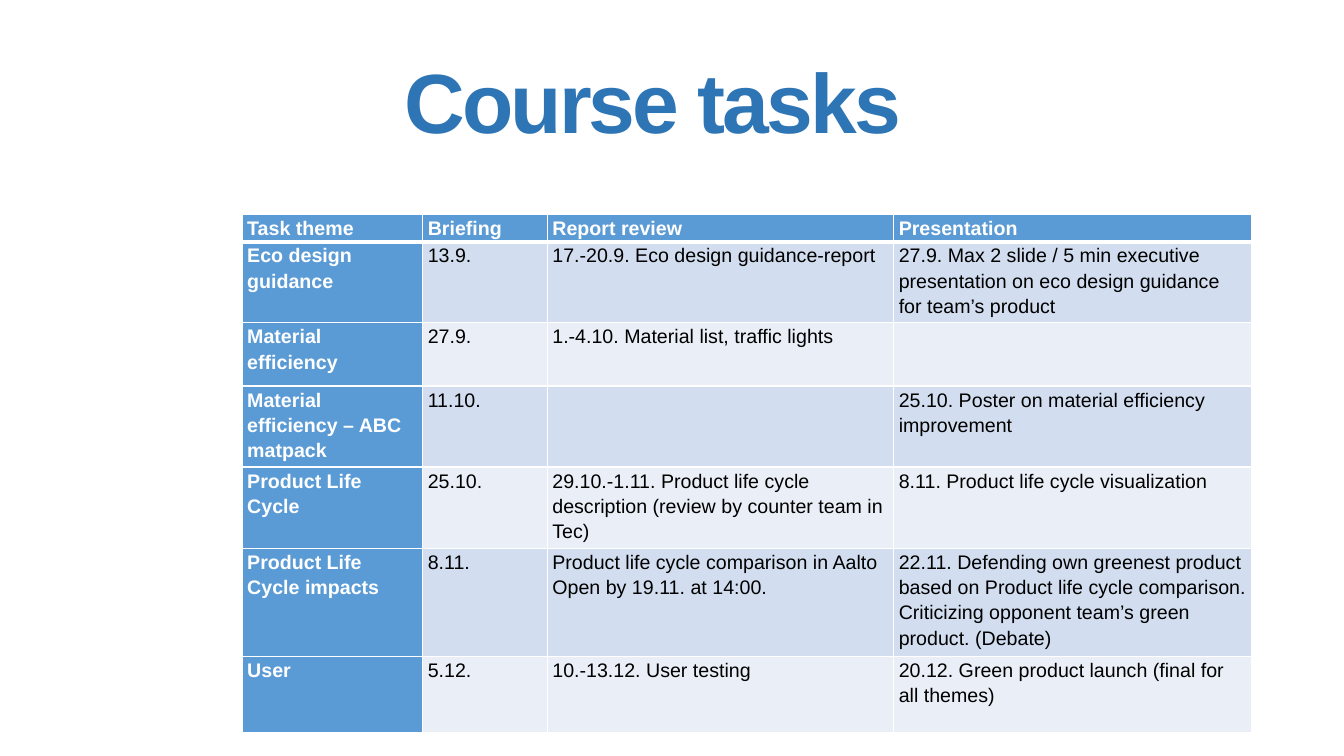
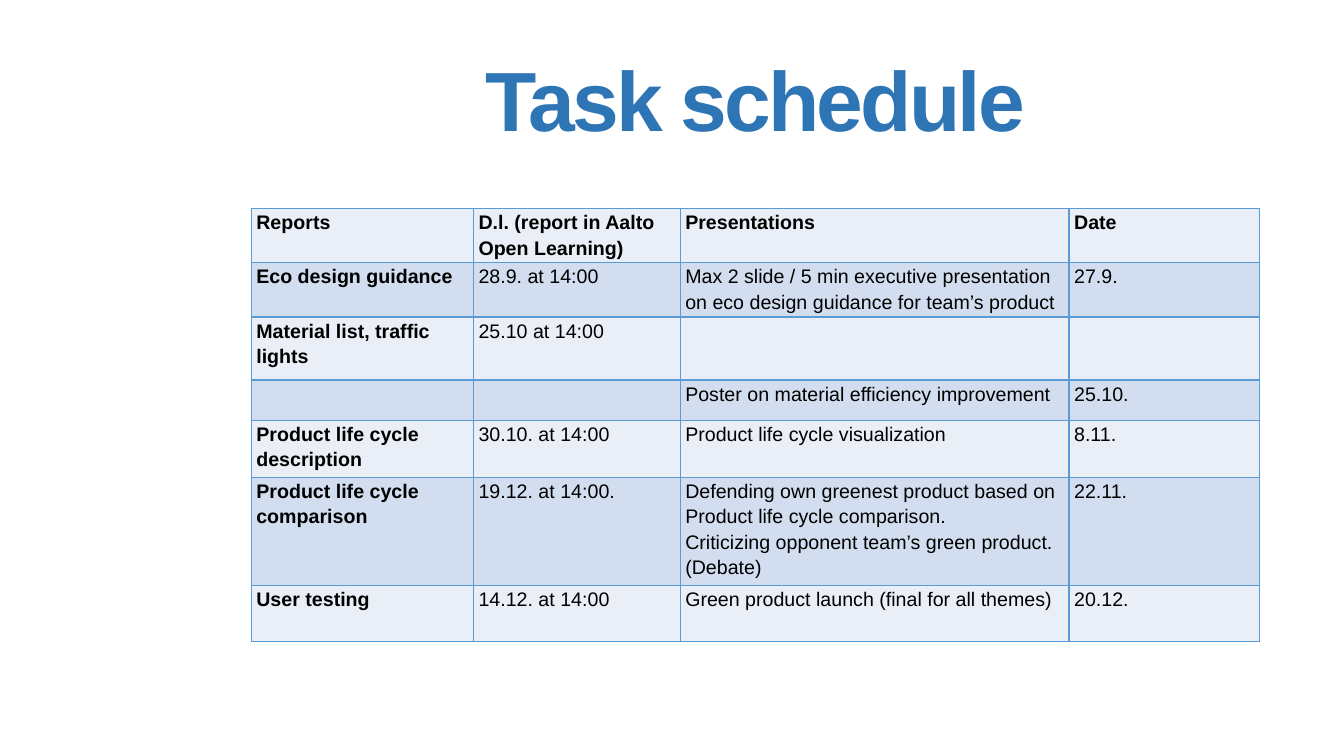
from lxml.etree import SubElement
from pptx import Presentation
from pptx.dml.color import RGBColor
from pptx.enum.text import MSO_ANCHOR, PP_ALIGN
from pptx.oxml.ns import qn
from pptx.util import Cm, Pt

BLUE, PALE, MIST, WHITE, BLACK = "5B9BD5", "D2DEEF", "EAEFF7", "FFFFFF", "000000"
BODY_FONT = {"name": "Arial", "size": Pt(14)}
TITLE_FONT = {"name": "Arial", "size": Pt(60), "bold": True}
TITLE_COLOR = "2E75B6"
CELL_FORMAT = {
    "margin_left": Cm(0.13), "margin_right": Cm(0.13),
    "margin_top": 0, "margin_bottom": 0, "vertical_anchor": MSO_ANCHOR.TOP,
}
TITLE_FRAME = {
    "margin_left": 0, "margin_right": 0, "margin_top": 0, "margin_bottom": 0,
    "word_wrap": True, "vertical_anchor": MSO_ANCHOR.TOP,
}

SLIDES = [
    {
        "title": "Course tasks",
        "title_box": (10.19, 1.73, 22, 3.18),
        "title_align": PP_ALIGN.LEFT,
        "table_at": (6.1, 5.41),
        "columns": [4.55, 3.14, 8.73, 9.03],
        "heights": [0.62, 1.92, 1.59, 1.92, 1.92, 2.56, 1.91],
        "border": WHITE,
        "header_rule": 3,
        "accent": {"fill": BLUE, "text": WHITE},
        "rows": [
            ("Task theme", "Briefing", "Report review", "Presentation"),
            ("Eco design guidance", "13.9.", "17.-20.9. Eco design guidance-report",
             "27.9. Max 2 slide / 5 min executive presentation on eco design guidance for team’s product"),
            ("Material efficiency", "27.9.", "1.-4.10. Material list, traffic lights", ""),
            ("Material efficiency – ABC matpack", "11.10.", "",
             "25.10. Poster on material efficiency improvement"),
            ("Product Life Cycle", "25.10.",
             "29.10.-1.11. Product life cycle description (review by counter team in Tec)",
             "8.11. Product life cycle visualization"),
            ("Product Life Cycle impacts", "8.11.",
             "Product life cycle comparison in Aalto Open by 19.11. at 14:00.",
             "22.11. Defending own greenest product based on Product life cycle comparison.\n"
             "Criticizing opponent team’s green product. (Debate)"),
            ("User", "5.12.", "10.-13.12. User testing",
             "20.12. Green product launch (final for all themes)"),
        ],
    },
    {
        "title": "Task schedule",
        "title_box": (11.02, 1.68, 16.03, 2.06),
        "title_align": PP_ALIGN.CENTER,
        "table_at": (6.33, 5.26),
        "columns": [5.6, 5.21, 9.8, 4.8],
        "heights": [1.27, 1.28, 1.59, 1.01, 1.44, 2.55, 1.41],
        "border": BLUE,
        "header_rule": 1,
        "accent": {"fill": None, "text": BLACK},
        "rows": [
            ("Reports", "D.l. (report in Aalto Open Learning)", "Presentations", "Date"),
            ("Eco design guidance", "28.9. at 14:00",
             "Max 2 slide / 5 min executive presentation on eco design guidance for team’s product",
             "27.9."),
            ("Material list, traffic lights", "25.10 at 14:00", "", ""),
            ("", "", "Poster on material efficiency improvement", "25.10."),
            ("Product life cycle description", "30.10. at 14:00",
             "Product life cycle visualization", "8.11."),
            ("Product life cycle comparison", "19.12. at 14:00.",
             "Defending own greenest product based on Product life cycle comparison.\n"
             "Criticizing opponent team’s green product. (Debate)", "22.11."),
            ("User testing", "14.12. at 14:00",
             "Green product launch (final for all themes)", "20.12."),
        ],
    },
]


def color(value):
    """Turn a hex string into a colour."""
    return RGBColor.from_string(value)


def apply(target, values):
    """Set every attribute named in a dict."""
    for name, value in values.items():
        setattr(target, name, value)


def add_title(page, content):
    """Add the large, tightly spaced slide title."""
    box = page.shapes.add_textbox(*map(Cm, content["title_box"]))
    apply(box.text_frame, TITLE_FRAME)
    para = box.text_frame.paragraphs[0]
    apply(para, {"alignment": content["title_align"], "line_spacing": 0.8})
    span = para.add_run()
    span.text = content["title"]
    apply(span.font, TITLE_FONT)
    span.font.color.rgb = color(TITLE_COLOR)
    span.font._element.set("spc", "-200")


def set_borders(cell, line_color, widths):
    """Draw the left, right, top and bottom borders of a cell."""
    properties = cell._tc.get_or_add_tcPr()
    for side, width in zip("LRTB", widths):
        line = SubElement(properties, qn(f"a:ln{side}"), w=str(Pt(width)))
        fill = SubElement(line, qn("a:solidFill"))
        SubElement(fill, qn("a:srgbClr"), val=line_color)


def fill_cell(cell, text, fill, text_color, bold):
    """Write and format one table cell."""
    apply(cell, CELL_FORMAT)
    cell.fill.solid()
    cell.fill.fore_color.rgb = color(fill)
    cell.text_frame.text = text
    for para in cell.text_frame.paragraphs:
        para.line_spacing = 1.15
        apply(para.font, BODY_FONT)
        for span in para.runs:
            apply(span.font, {**BODY_FONT, "bold": bold})
            span.font.color.rgb = color(text_color)


def add_schedule(page, content):
    """Add the table with a header row, a bold first column and banded rows."""
    rows, columns, heights = content["rows"], content["columns"], content["heights"]
    left, top = content["table_at"]
    table = page.shapes.add_table(
        len(rows), len(columns), Cm(left), Cm(top), Cm(sum(columns)), Cm(sum(heights))).table
    apply(table, {"first_row": False, "horz_banding": False})
    for column, width in zip(table.columns, columns):
        column.width = Cm(width)
    for row, height in zip(table.rows, heights):
        row.height = Cm(height)

    accent, rule = content["accent"], content["header_rule"]
    for row_index, row in enumerate(rows):
        band = PALE if row_index % 2 else MIST
        widths = (1, 1, rule if row_index == 1 else 1, rule if row_index == 0 else 1)
        for column_index, text in enumerate(row):
            cell = table.cell(row_index, column_index)
            heading = row_index == 0 or column_index == 0
            fill = accent["fill"] if heading and accent["fill"] else band
            set_borders(cell, content["border"], widths)
            fill_cell(cell, text, fill, accent["text"] if heading else BLACK, heading)


def main():
    """Build the deck."""
    deck = Presentation()
    apply(deck, {"slide_width": Cm(33.87), "slide_height": Cm(19.05)})
    for content in SLIDES:
        page = deck.slides.add_slide(deck.slide_layouts[6])
        add_title(page, content)
        add_schedule(page, content)
    deck.save("out.pptx")


if __name__ == "__main__":
    main()
